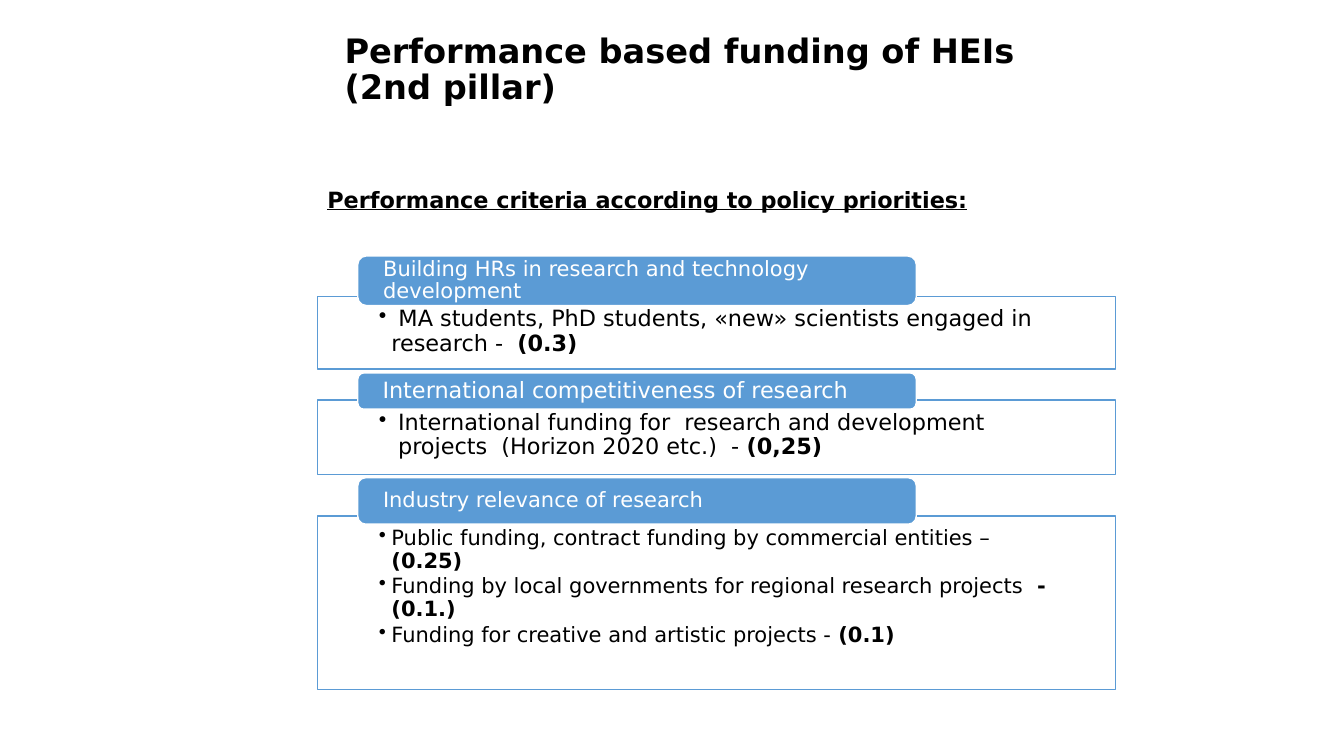
from dataclasses import dataclass

from lxml.etree import SubElement
from pptx import Presentation
from pptx.dml.color import RGBColor as Rgb
from pptx.enum.shapes import MSO_SHAPE as Preset
from pptx.enum.text import MSO_ANCHOR as Anchor, PP_ALIGN as Align
from pptx.oxml.ns import qn
from pptx.util import Pt


@dataclass(frozen=True)
class Theme:
    font: str = "DejaVu Sans"
    black: Rgb = Rgb(0, 0, 0)
    white: Rgb = Rgb(255, 255, 255)
    blue: Rgb = Rgb(0x5B, 0x9B, 0xD5)
    title_size: int = 24
    large_size: int = 16
    small_size: int = 15


class CriteriaSlide:
    panel_left, panel_width = 226.8, 570.2
    label_left, label_width = 255.6, 398.9

    def __init__(self, deck, theme):
        self.theme = theme
        self.page = deck.slides.add_slide(deck.slide_layouts[6])

    def style(self, para, size, color, spacing=0.9):
        para.alignment = Align.LEFT
        para.line_spacing = spacing
        for span in para.runs:
            span.font.name = self.theme.font
            span.font.size = Pt(size)
            span.font.color.rgb = color

    def heading(self, text, left, top, width, height, size, spacing, underline=False):
        box = self.page.shapes.add_textbox(Pt(left), Pt(top), Pt(width), Pt(height))
        frame = box.text_frame
        frame.word_wrap = True
        para = frame.paragraphs[0]
        para.text = text
        self.style(para, size, self.theme.black, spacing)
        for span in para.runs:
            span.font.bold = True
            span.font.underline = underline

    def block(self, preset, left, top, width, height, fill, line, side, edge):
        box = self.page.shapes.add_shape(preset, Pt(left), Pt(top), Pt(width), Pt(height))
        box.shadow.inherit = False
        box.fill.solid()
        box.fill.fore_color.rgb = fill
        box.line.color.rgb = line
        box.line.width = Pt(1)
        frame = box.text_frame
        frame.word_wrap = True
        frame.margin_left = frame.margin_right = Pt(side)
        frame.margin_top = frame.margin_bottom = Pt(edge)
        return frame

    def panel(self, top, height, items, size, hanging):
        theme = self.theme
        frame = self.block(Preset.RECTANGLE, self.panel_left, top, self.panel_width,
                           height, theme.white, theme.blue, 43.9, 8)
        frame.vertical_anchor = Anchor.TOP
        for index, (criterion, weight) in enumerate(items):
            para = frame.add_paragraph() if index else frame.paragraphs[0]
            para.text = criterion
            share = para.add_run()
            share.text = weight
            share.font.bold = True
            para.space_after = Pt(size * 0.15)
            self.style(para, size, theme.black)
            props = para._p.get_or_add_pPr()
            props.set("marL", str(Pt(hanging)))
            props.set("indent", str(-Pt(hanging)))
            SubElement(props, qn("a:buChar")).set("char", "•")

    def label(self, top, height, text, size):
        theme = self.theme
        frame = self.block(Preset.ROUNDED_RECTANGLE, self.label_left, top, self.label_width,
                           height, theme.blue, theme.white, 16.4, 0)
        frame.vertical_anchor = Anchor.MIDDLE
        frame.text = text
        self.style(frame.paragraphs[0], size, theme.white)


def main():
    deck = Presentation()
    deck.slide_width, deck.slide_height = Pt(960), Pt(540)
    theme = Theme()
    slide = CriteriaSlide(deck, theme)
    slide.heading("Performance based funding of HEIs\n(2nd pillar)",
                  239, 20.9, 596.9, 61.2, theme.title_size, 0.9)
    slide.heading("Performance criteria according to policy priorities:",
                  226.8, 129.6, 492.5, 26.6, theme.large_size, 1, underline=True)

    large, small = theme.large_size, theme.small_size
    groups = [
        ("Building HRs in research and technology development", small, 182.9, 35.3,
         211.7, 51.8, large, 8.9,
         [(" MA students, PhD students, «new» scientists engaged in research -  ", "(0.3)")]),
        ("International competitiveness of research", large, 266.4, 25.9,
         285.8, 53.3, large, 13.7,
         [("International funding for  research and development  projects  "
           "(Horizon 2020 etc.)  - ", "(0,25)")]),
        ("Industry relevance of research", small, 341.3, 33.1,
         368.6, 123.8, small, 8.9,
         [("Public funding, contract funding by commercial entities – ", "(0.25)"),
          ("Funding by local governments for regional research projects  ", "- (0.1.)"),
          ("Funding for creative and artistic projects - ", "(0.1)")]),
    ]
    for (name, name_size, label_top, label_height,
         panel_top, panel_height, item_size, hanging, items) in groups:
        slide.panel(panel_top, panel_height, items, item_size, hanging)
        slide.label(label_top, label_height, name, name_size)
    deck.save("out.pptx")


if __name__ == "__main__":
    main()
